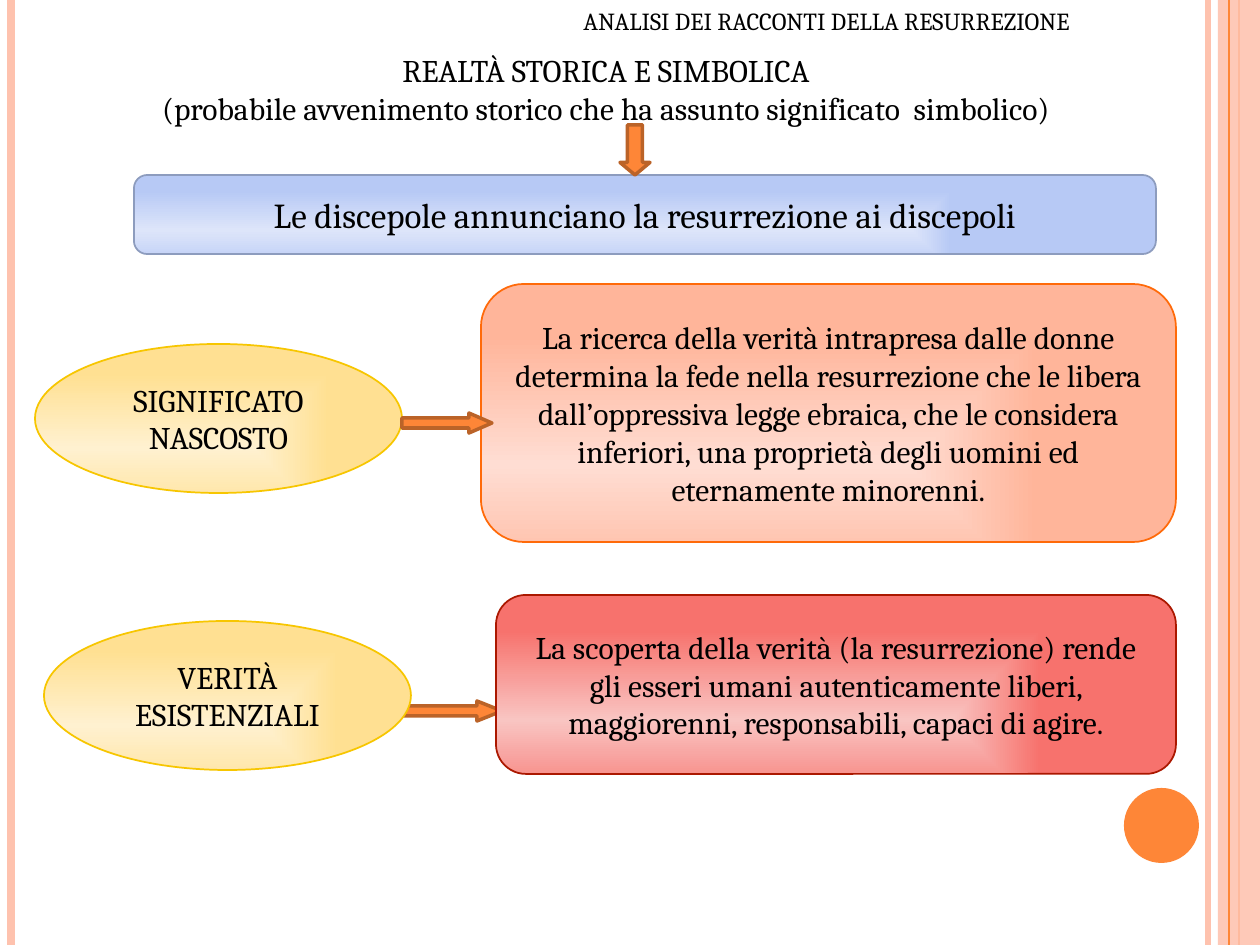
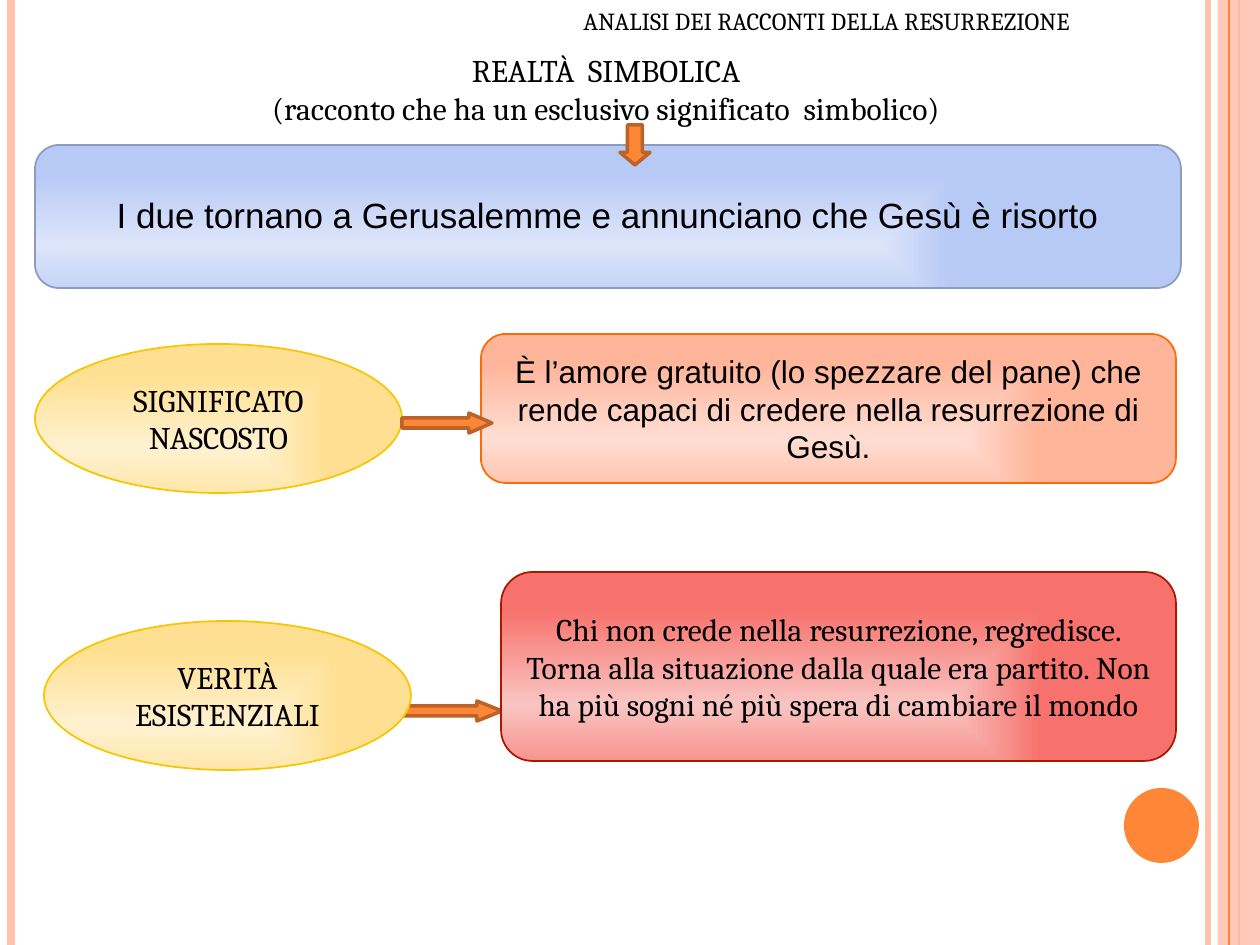
"""Build two slides that trace a resurrection story to its hidden meaning and its truths."""
from dataclasses import dataclass

from lxml import etree
from pptx import Presentation
from pptx.dml.color import RGBColor
from pptx.enum.shapes import MSO_CONNECTOR, MSO_SHAPE
from pptx.enum.text import MSO_ANCHOR, PP_ALIGN
from pptx.oxml.ns import qn
from pptx.util import Pt

ROUND = MSO_SHAPE.ROUNDED_RECTANGLE
OVAL = MSO_SHAPE.OVAL
RECT = MSO_SHAPE.RECTANGLE
DOWN = MSO_SHAPE.DOWN_ARROW
RIGHT = MSO_SHAPE.RIGHT_ARROW
STRAIGHT = MSO_CONNECTOR.STRAIGHT
LEFT = PP_ALIGN.LEFT
CENTER = PP_ALIGN.CENTER
TOP = MSO_ANCHOR.TOP
MIDDLE = MSO_ANCHOR.MIDDLE

SCALE = 914400 / 126
WIDE, HIGH = 1260, 945


@dataclass(frozen=True)
class Theme:
    ink: str = "000000"
    pale: str = "FEC2AE"
    orange: str = "FE8637"
    rust: str = "BB6328"
    blue: tuple = ("DDE5FA", "B7C9F5", "8D9CBE")
    gold: tuple = ("FFF1D0", "FFE092", "F7C600")
    peach: tuple = ("FFDDD3", "FFB59A", "FF6A09")
    red: tuple = ("F9C5C2", "F7726D", "AB1800")
    serif: str = "Cambria"
    sans: str = "Arial"
    small: int = 14
    body: int = 18
    large: int = 20


THEME = Theme()


def px(*spans):
    return [round(span * SCALE) for span in spans]


def rgb(code):
    return RGBColor.from_string(code)


def write(frame, text, size=THEME.body, font=THEME.serif, align=CENTER,
          anchor=MIDDLE, space=None):
    frame.word_wrap = True
    frame.vertical_anchor = anchor
    frame.text = text
    for para in frame.paragraphs:
        para.alignment = align
        para.line_spacing = space
        for run in para.runs:
            run.font.size = Pt(size)
            run.font.name = font
            run.font.color.rgb = rgb(THEME.ink)


def label(slide, box, text, **style):
    frame = slide.shapes.add_textbox(*px(*box)).text_frame
    write(frame, text, anchor=TOP, **style)


def solid(slide, kind, box, fill, edge=None):
    shape = slide.shapes.add_shape(kind, *px(*box))
    shape.shadow.inherit = False
    shape.fill.solid()
    shape.fill.fore_color.rgb = rgb(fill)
    if edge:
        shape.line.color.rgb = rgb(edge)
        shape.line.width = Pt(2)
    else:
        shape.line.fill.background()
    return shape


def glow(slide, kind, box, tones, text, **style):
    shape = slide.shapes.add_shape(kind, *px(*box))
    shape.shadow.inherit = False
    shape.fill.gradient()
    for stop, tone in zip(shape.fill.gradient_stops, tones):
        stop.color.rgb = rgb(tone)
    grad = shape.element.spPr.find(qn("a:gradFill"))
    old = grad.find(qn("a:lin"))
    focus = etree.Element(qn("a:path"), {"path": "shape"})
    etree.SubElement(focus, qn("a:fillToRect"),
                     {"l": "30000", "t": "70000", "r": "70000", "b": "30000"})
    grad.replace(old, focus)
    shape.line.color.rgb = rgb(tones[-1])
    shape.line.width = Pt(1)
    write(shape.text_frame, text, **style)


def arrow(slide, kind, box, head):
    shape = solid(slide, kind, box, THEME.orange, THEME.rust)
    shape.adjustments[1] = head / min(box[2:])


def stripe(slide, x, color, width):
    line = slide.shapes.add_connector(STRAIGHT, *px(x, 0, x, HIGH))
    line.line.color.rgb = rgb(color)
    line.line.width = Pt(width)
    etree.SubElement(line.element.spPr, qn("a:effectLst"))


def border(slide):
    stripe(slide, 1208, THEME.pale, 3)
    stripe(slide, 11, THEME.pale, 4.5)
    stripe(slide, 1239, THEME.orange, 1.5)
    band = solid(slide, RECT, (1218, 0, 42, HIGH), THEME.pale)
    color = band.element.spPr.find(qn("a:solidFill"))[0]
    etree.SubElement(color, qn("a:alpha"), val="87000")
    stripe(slide, 1229, THEME.orange, 0.75)
    solid(slide, OVAL, (1124, 788, 75, 75), THEME.orange)


def story(deck, title, drop, event, sense, truth):
    slide = deck.slides.add_slide(deck.slide_layouts[6])
    border(slide)
    label(slide, (571, 0, 689, 42), "ANALISI DEI RACCONTI DELLA RESURREZIONE",
          size=THEME.small, align=LEFT)
    label(slide, (35, 45, 1142, 88), title)
    box, text, style = event
    glow(slide, ROUND, box, THEME.blue, text, size=THEME.large, **style)
    arrow(slide, DOWN, (620, 125, 30, drop), 12.5)
    glow(slide, OVAL, (35, 344, 367, 149), THEME.gold, "SIGNIFICATO NASCOSTO")
    box, text, style = sense
    glow(slide, ROUND, box, THEME.peach, text, **style)
    arrow(slide, RIGHT, (402, 413, 90, 20), 23)
    arrow(slide, RIGHT, (402, 701, 100, 20), 25)
    box, text = truth
    glow(slide, ROUND, box, THEME.red, text)
    glow(slide, OVAL, (44, 621, 367, 149), THEME.gold, "VERITÀ ESISTENZIALI")


def main():
    deck = Presentation()
    deck.slide_width, deck.slide_height = px(WIDE, HIGH)
    story(
        deck,
        "REALTÀ STORICA E SIMBOLICA\n"
        "(probabile avvenimento storico che ha assunto significato  simbolico)",
        50,
        ((134, 175, 1022, 79),
         "Le discepole annunciano la resurrezione ai discepoli", {}),
        ((481, 284, 695, 258),
         "La ricerca della verità intrapresa dalle donne determina la fede nella "
         "resurrezione che le libera dall’oppressiva legge ebraica, che le considera "
         "inferiori, una proprietà degli uomini ed eternamente minorenni.", {}),
        ((496, 595, 680, 179),
         "La scoperta della verità (la resurrezione) rende gli esseri umani "
         "autenticamente liberi, maggiorenni, responsabili, capaci di agire."),
    )
    story(
        deck,
        "REALTÀ  SIMBOLICA\n(racconto che ha un esclusivo significato  simbolico)",
        40,
        ((35, 145, 1146, 143),
         "I due tornano a Gerusalemme e annunciano che Gesù è risorto",
         {"font": THEME.sans, "space": 0.93}),
        ((481, 334, 695, 149),
         "È l’amore gratuito (lo spezzare del pane) che rende capaci di credere "
         "nella resurrezione di Gesù.", {"font": THEME.sans}),
        ((501, 572, 675, 189),
         "Chi non crede nella resurrezione, regredisce. Torna alla situazione dalla "
         "quale era partito. Non ha più sogni né più spera di cambiare il mondo"),
    )
    deck.save("out.pptx")


if __name__ == "__main__":
    main()
